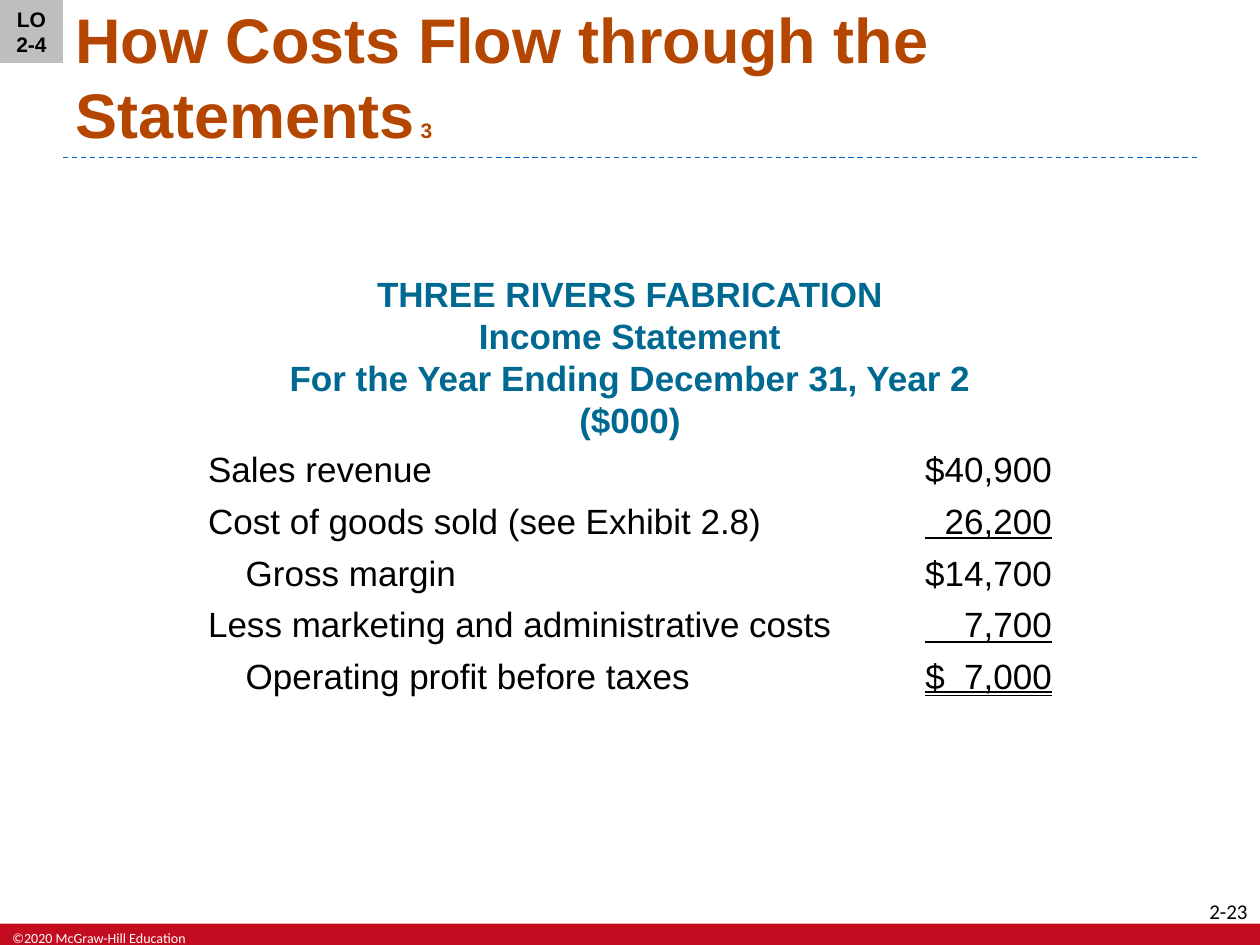
from lxml import etree
from pptx import Presentation
from pptx import util as u
from pptx.dml.color import RGBColor
from pptx.enum import dml, shapes, text
from pptx.oxml.ns import qn

ALIGN = text.PP_ALIGN
ANCHOR = text.MSO_ANCHOR


def color(code):
    return RGBColor.from_string(code)


def write(frame, content, size=20, face="Arial", ink="000000", bold=False,
          underline=None, align=ALIGN.LEFT, anchor=ANCHOR.TOP):
    """Set the text of a frame and return its first paragraph."""
    frame.word_wrap = True
    frame.vertical_anchor = anchor
    frame.text = content
    para = frame.paragraphs[0]
    para.alignment = align
    for span in para.runs:
        span.font.size = u.Pt(size)
        span.font.name = face
        span.font.bold = bold
        span.font.underline = underline
        span.font.color.rgb = color(ink)
    return para


deck = Presentation()
deck.slide_width, deck.slide_height = u.Cm(25.4), u.Cm(19.05)
page = deck.slides.add_slide(deck.slide_layouts[6])

# Footer band and learning objective tag
blocks = []
for left, top, width, height, fill in [(0, 18.62, 25.4, 0.43, "C30C20"),
                                       (0, 0, 1.27, 1.27, "BEBEBE")]:
    block = page.shapes.add_shape(shapes.MSO_SHAPE.RECTANGLE, u.Cm(left), u.Cm(top),
                                  u.Cm(width), u.Cm(height))
    block.shadow.inherit = False
    block.fill.solid()
    block.fill.fore_color.rgb = color(fill)
    block.line.fill.background()
    blocks.append(block)
write(blocks[1].text_frame, "LO 2-4", size=12, bold=True, align=ALIGN.CENTER,
      anchor=ANCHOR.MIDDLE)

# Dashed rule under the title
rule = page.shapes.add_connector(shapes.MSO_CONNECTOR.STRAIGHT, u.Cm(1.27), u.Cm(3.18),
                                 u.Cm(24.13), u.Cm(3.18))
rule.line.color.rgb = color("0064C8")
rule.line.width = u.Pt(0.75)
rule.line.dash_style = dml.MSO_LINE.DASH
etree.SubElement(rule.line._get_or_add_ln().getparent(), qn("a:effectLst"))

# Text boxes: footer, page number, title, statement heading
heading = ("THREE RIVERS FABRICATION\vIncome Statement\v"
           "For the Year Ending December 31, Year 2\v($000)")
paras = []
for left, top, width, height, content, style in [
    (0, 18.62, 4.06, 0.43, "©2020 McGraw-Hill Education",
     dict(size=8, face="Calibri", ink="FFFFFF")),
    (24.03, 17.98, 1.37, 0.51, "2-23",
     dict(size=12, face="Calibri", align=ALIGN.RIGHT)),
    (1.27, 0.13, 22.86, 3.05, "How Costs Flow through the Statements",
     dict(size=36, ink="B44600", bold=True, anchor=ANCHOR.BOTTOM)),
    (1.9, 5.36, 21.6, 3.6, heading,
     dict(ink="006991", bold=True, align=ALIGN.CENTER)),
]:
    box = page.shapes.add_textbox(u.Cm(left), u.Cm(top), u.Cm(width), u.Cm(height))
    paras.append(write(box.text_frame, content, **style))

# Small part number after the title
span = paras[2].add_run()
span.text = " 3"
span.font.size = u.Pt(12)
span.font.name = "Arial"
span.font.bold = True
span.font.color.rgb = color("B44600")

# Income statement: label, amount, indented, underline
single = text.MSO_UNDERLINE.SINGLE_LINE
double = text.MSO_UNDERLINE.DOUBLE_LINE
entries = [
    ("Sales revenue", "$40,900", False, None),
    ("Cost of goods sold (see Exhibit 2.8)", "  26,200", False, single),
    ("Gross margin", "$14,700", True, None),
    ("Less marketing and administrative costs", "    7,700", False, single),
    ("Operating profit before taxes", "$  7,000", True, double),
]
row_height = u.Cm(1.04)
frame = page.shapes.add_table(len(entries), 2, u.Cm(3.94), u.Cm(8.97), u.Cm(17.52),
                              row_height * len(entries))
table = frame.table
table.first_row = table.horz_banding = False
table.columns[0].width, table.columns[1].width = u.Cm(14.22), u.Cm(3.3)
for row, (label, amount, indented, underline) in zip(table.rows, entries):
    row.height = row_height
    for cell in row.cells:
        cell.fill.background()
        cell.margin_top = cell.margin_bottom = u.Cm(0.08)
        cell.vertical_anchor = ANCHOR.MIDDLE
    name, value = row.cells
    para = write(name.text_frame, label, anchor=None)
    if indented:
        para._p.get_or_add_pPr().set("marL", str(u.Cm(0.76)))
    write(value.text_frame, amount, underline=underline, align=ALIGN.RIGHT, anchor=None)

# Plain grid: drop the default table style
style_id = table._tbl.tblPr.find(qn("a:tableStyleId"))
style_id.text = "{2D5ABB26-0587-4C30-8999-92F81FD0307C}"

deck.save("out.pptx")
